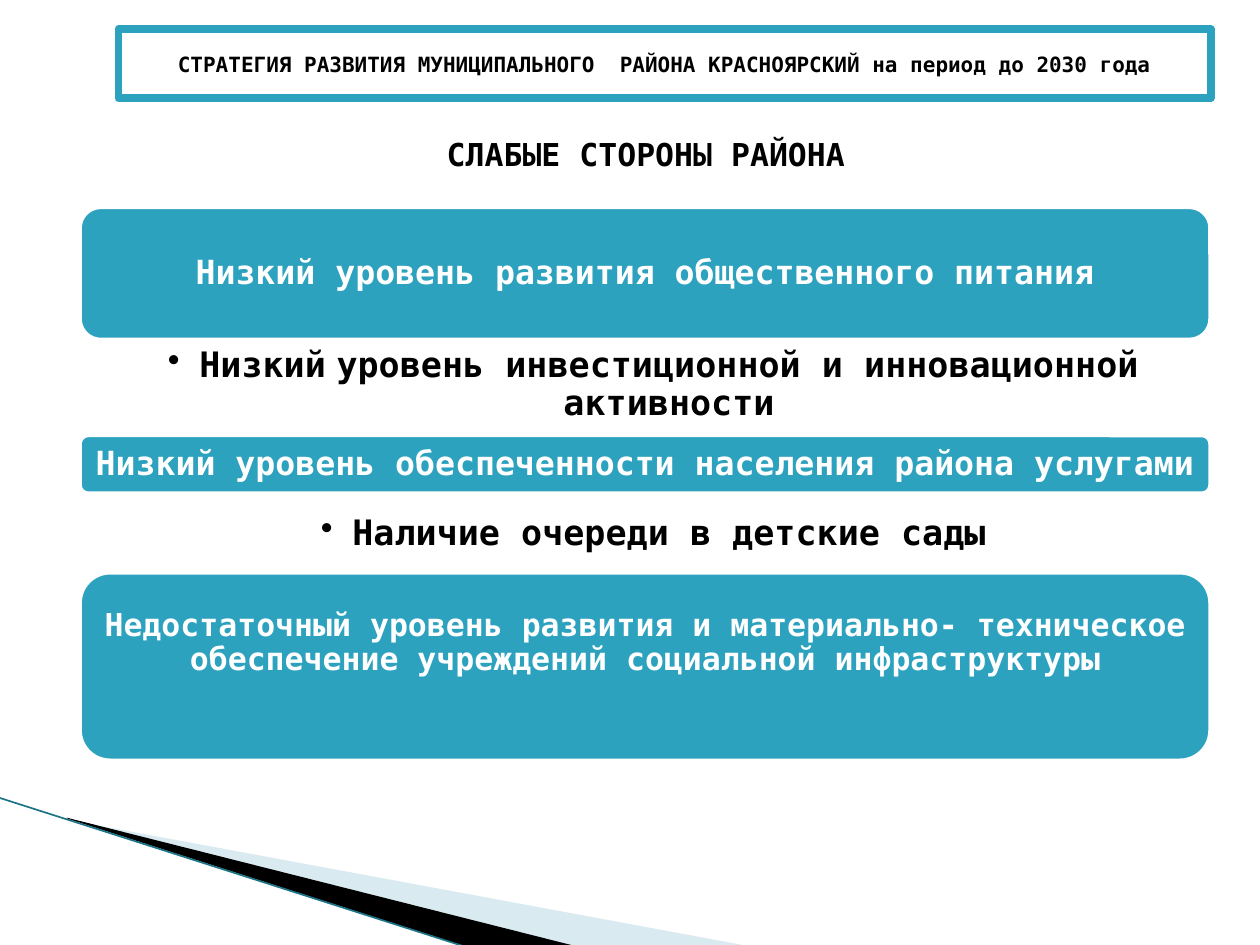
from lxml import etree
from pptx import Presentation
from pptx import util as u
from pptx.dml.color import RGBColor
from pptx.enum import shapes, text
from pptx.oxml import ns

Pt = u.Pt
FONT = "DejaVu Sans Mono"
COLORS = {
    "teal": "2DA2BF",
    "pale": "A0CBDC",
    "edge": "1B7587",
    "black": "000000",
    "white": "FFFFFF",
}
LEFT, WIDTH = 44.64, 648
BORDER = 4.33


def color(name):
    return RGBColor.from_string(COLORS[name])


def add_xml(parent, tag, **attributes):
    return etree.SubElement(parent, ns.qn(tag), attributes)


def style_text(para, size, ink):
    para.alignment = text.PP_ALIGN.CENTER
    para.font.name = FONT
    para.font.size = Pt(size)
    para.font.bold = True
    para.font.color.rgb = color(ink)


def set_insets(frame, left, top, right, bottom):
    frame.margin_left, frame.margin_top = Pt(left), Pt(top)
    frame.margin_right, frame.margin_bottom = Pt(right), Pt(bottom)


def add_wedge(page, points, fill, opacity=100):
    """Draw a filled sliver of the corner decoration."""
    corners = [(Pt(x), Pt(y)) for x, y in points]
    builder = page.shapes.build_freeform(*corners[0], scale=1.0)
    builder.add_line_segments(corners[1:], close=True)
    wedge = builder.convert_to_shape()
    wedge.shadow.inherit = False
    wedge.line.fill.background()
    wedge.fill.solid()
    wedge.fill.fore_color.rgb = color(fill)
    if opacity < 100:
        tint = wedge.fill._xPr.find(".//" + ns.qn("a:srgbClr"))
        add_xml(tint, "a:alpha", val=str(opacity * 1000))


def add_edge(page, start, end):
    """Draw the thin line along the corner decoration."""
    edge = page.shapes.add_connector(
        shapes.MSO_CONNECTOR.STRAIGHT, *map(Pt, start + end))
    edge.line.color.rgb = color("edge")
    edge.line.width = Pt(0.95)
    add_xml(edge._element.spPr, "a:effectLst")


def add_box(page, kind, place, fill, line, words, size, ink):
    """Draw a bordered box with centred bold text."""
    box = page.shapes.add_shape(kind, *map(Pt, place))
    box.shadow.inherit = False
    box.fill.solid()
    box.fill.fore_color.rgb = color(fill)
    box.line.color.rgb = color(line)
    box.line.width = Pt(BORDER)
    frame = box.text_frame
    frame.word_wrap = True
    frame.vertical_anchor = text.MSO_ANCHOR.MIDDLE
    para = frame.paragraphs[0]
    para.text = words
    style_text(para, size, ink)
    return frame


def add_card(page, top, height, words, size, inset, bottom=None):
    """Draw a rounded teal card across the column."""
    frame = add_box(page, shapes.MSO_SHAPE.ROUNDED_RECTANGLE,
                    (LEFT, top, WIDTH, height),
                    "teal", "white", words, size, "white")
    set_insets(frame, inset, inset, inset, bottom or inset)
    frame.paragraphs[0].line_spacing = 0.9


def add_heading(page, words):
    box = page.shapes.add_textbox(Pt(236.16), Pt(73.44), Pt(265.68), Pt(28.8))
    box.text_frame.word_wrap = False
    para = box.text_frame.paragraphs[0]
    para.text = words
    style_text(para, 18, "black")


def add_bullet(page, top, height, pieces):
    """Add a bulleted line; pieces are (words, size or None for the default)."""
    box = page.shapes.add_textbox(Pt(LEFT), Pt(top), Pt(WIDTH), Pt(height))
    frame = box.text_frame
    frame.word_wrap = True
    set_insets(frame, 20.88, 2, 11.52, 2)
    para = frame.paragraphs[0]
    para.level = 1
    para.line_spacing = 0.9
    props = para._p.get_or_add_pPr()
    props.set("marL", str(Pt(18)))
    props.set("indent", str(-Pt(18)))
    add_xml(props, "a:buChar", char="•")
    style_text(para, 20, "black")
    for words, size in pieces:
        span = para.add_run()
        span.text = words
        if size:
            span.font.size = Pt(size)


def main():
    deck = Presentation()
    deck.slide_width, deck.slide_height = Pt(720), Pt(540)
    page = deck.slides.add_slide(deck.slide_layouts[6])

    # Corner decoration
    add_wedge(page, [(39.6, 468.7), (428.4, 540.7), (328.3, 540.7), (39.6, 468)],
              "pale", 40)
    add_wedge(page, [(38.2, 467.3), (329, 540.7), (267.8, 541.4), (38.9, 468)],
              "black")
    add_edge(page, (-0.7, 455.8), (267.1, 541.4))

    # Title and heading
    add_box(page, shapes.MSO_SHAPE.RECTANGLE, (67.68, 16.56, 624.24, 39.6),
            "white", "teal",
            "СТРАТЕГИЯ РАЗВИТИЯ МУНИЦИПАЛЬНОГО  РАЙОНА КРАСНОЯРСКИЙ "
            "на период до 2030 года", 12, "black")
    add_heading(page, "СЛАБЫЕ СТОРОНЫ РАЙОНА")

    # Weaknesses: cards alternating with bullets
    add_card(page, 117.36, 77.76,
             "Низкий уровень развития общественного питания", 19, 5.76)
    add_bullet(page, 196.56, 26.64, [
        ("Низкий", None), (" ", 10),
        ("уровень инвестиционной и инновационной активности", None)])
    add_card(page, 247.68, 35.28,
             "Низкий уровень обеспеченности населения района услугами", 19, 5.76)
    add_bullet(page, 292.32, 31.68, [("Наличие очереди в детские сады", None)])
    add_card(page, 326.16, 109.44,
             "Недостаточный уровень развития и материально- техническое "
             "обеспечение учреждений социальной инфраструктуры", 18, 5, 31)

    deck.save("out.pptx")


if __name__ == "__main__":
    main()
